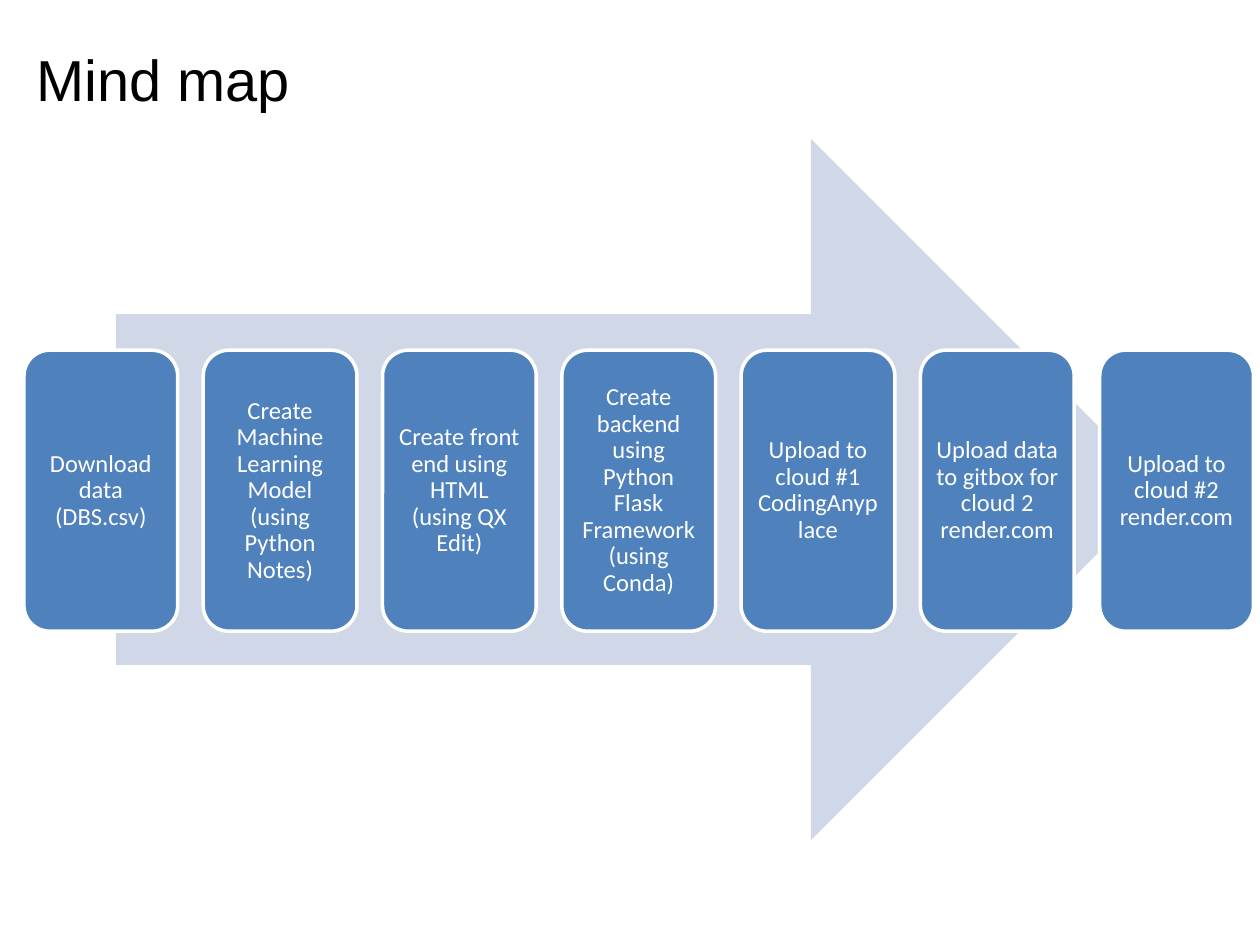
from pptx import Presentation
from pptx.dml.color import RGBColor
from pptx.enum.shapes import MSO_SHAPE as Shape
from pptx.enum.text import MSO_ANCHOR as Anchor, PP_ALIGN as Align
from pptx.util import Inches, Pt

STEPS = [
    "Download data (DBS.csv)",
    "Create Machine Learning Model (using Python Notes)",
    "Create front end using HTML (using QX Edit)",
    "Create backend using Python Flask Framework (using Conda)",
    "Upload to cloud #1 CodingAnyplace",
    "Upload data to gitbox for cloud 2 render.com",
    "Upload to cloud #2 render.com",
]
FIRST_LEFT, STEP_PITCH = 0.19, 1.423


def style_text(para, font_name, size, color, align):
    para.alignment = align
    font = para.runs[0].font
    font.name = font_name
    font.size = Pt(size)
    font.color.rgb = RGBColor.from_string(color)


def add_filled(page, kind, left, top, width, height, color):
    shape = page.shapes.add_shape(
        kind, Inches(left), Inches(top), Inches(width), Inches(height))
    shape.shadow.inherit = False
    shape.fill.solid()
    shape.fill.fore_color.rgb = RGBColor.from_string(color)
    return shape


deck = Presentation()
deck.slide_width, deck.slide_height = Inches(10), Inches(7.5)
page = deck.slides.add_slide(deck.slide_layouts[5])

title = page.shapes.title
title.left, title.top = Inches(0.19), Inches(0)
title.width, title.height = Inches(9), Inches(1.25)
title.text_frame.text = "Mind map"
title.text_frame.vertical_anchor = Anchor.MIDDLE
style_text(title.text_frame.paragraphs[0], "Arial", 33, "000000", Align.LEFT)

arrow = add_filled(page, Shape.RIGHT_ARROW, 0.92, 1.1, 8.3, 5.57, "D0D8E8")
arrow.line.fill.background()

for index, step in enumerate(STEPS):
    left = FIRST_LEFT + index * STEP_PITCH
    box = add_filled(page, Shape.ROUNDED_RECTANGLE, left, 2.78, 1.22, 2.23, "4F81BD")
    box.line.color.rgb = RGBColor.from_string("FFFFFF")
    box.line.width = Pt(2)

    frame = box.text_frame
    frame.word_wrap = True
    frame.vertical_anchor = Anchor.MIDDLE
    frame.margin_left = frame.margin_right = Inches(0.06)
    frame.margin_top = frame.margin_bottom = Inches(0.06)
    frame.text = step
    para = frame.paragraphs[0]
    para.line_spacing = 0.9
    style_text(para, "Calibri", 14, "FFFFFF", Align.CENTER)

deck.save("out.pptx")
